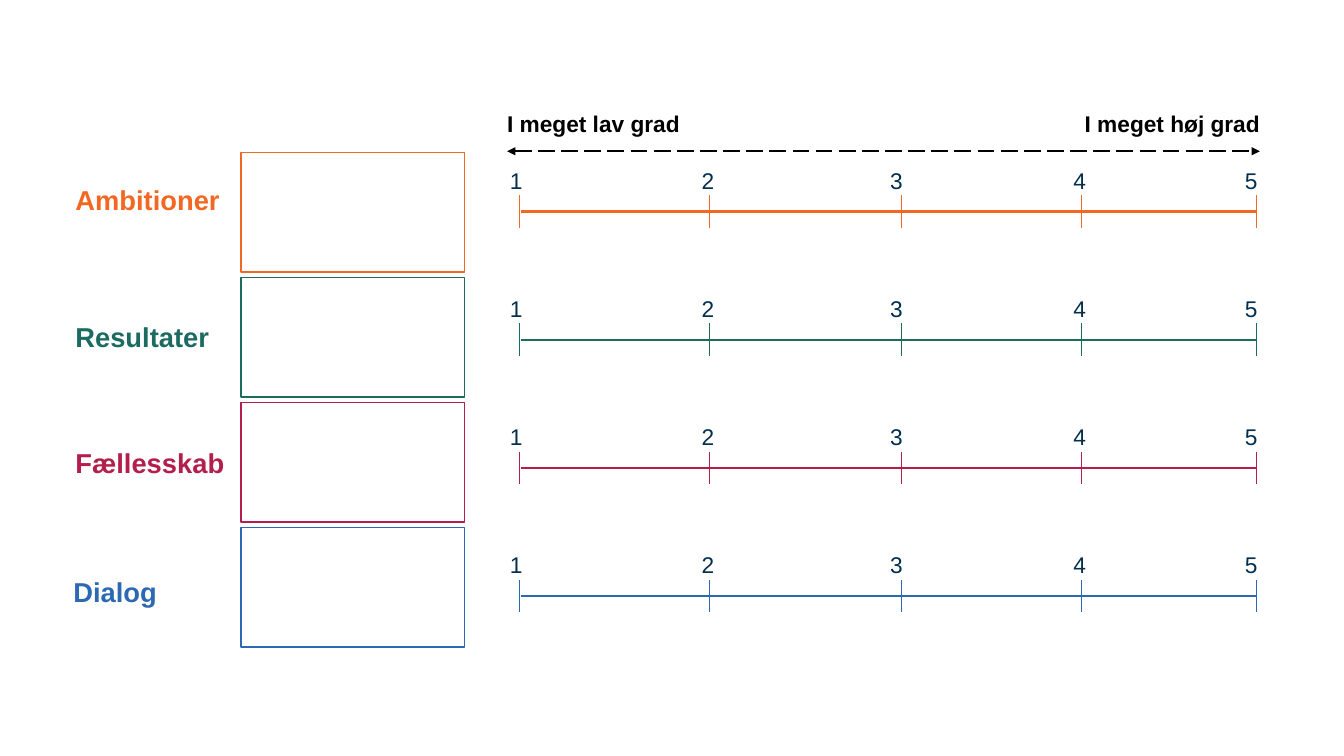
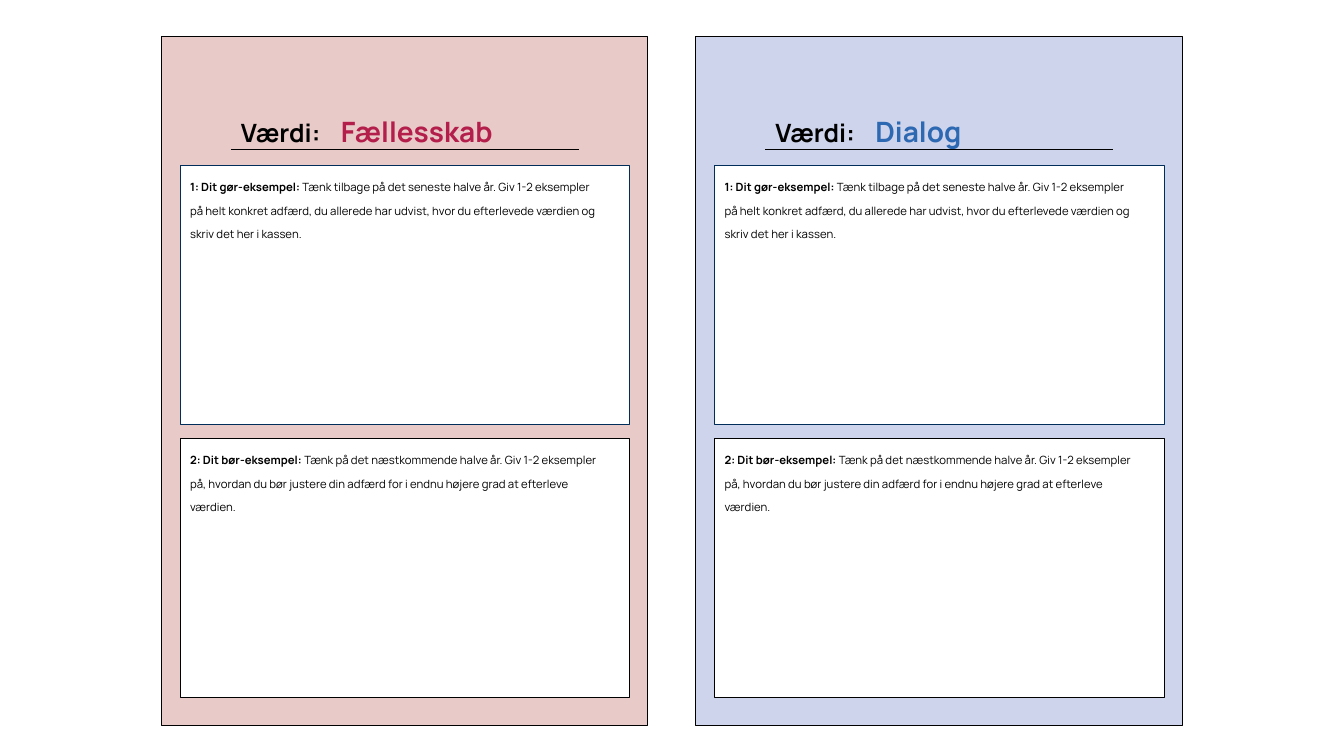
import pptx
import pptx.dml.color
import pptx.enum.dml
import pptx.enum.shapes
import pptx.enum.text
import pptx.oxml.ns
import pptx.util
from lxml import etree
from pptx.util import Cm

qn = pptx.oxml.ns.qn


class Theme:
    black = "000000"
    white = "FFFFFF"
    navy = "022F4C"
    frame = "002D59"
    orange = "F26721"
    green = "1C6B61"
    crimson = "B31E4B"
    blue = "2D68B2"
    rose = "E8CAC8"
    lavender = "CED4EC"
    scale_font = "Arial"
    card_font = "Manrope"
    label = 19.5
    number = 16.2
    heading = 18
    value = 20
    prompt = 14


class Deck:
    def __init__(self, theme):
        self.theme = theme
        self.prs = pptx.Presentation()
        self.prs.slide_width = Cm(33.87)
        self.prs.slide_height = Cm(19.05)
        self.s = None

    def slide(self):
        self.s = self.prs.slides.add_slide(self.prs.slide_layouts[6])

    def color(self, value):
        return pptx.dml.color.RGBColor.from_string(value)

    def rect(self, x, y, w, h, line, width=0.75, fill=None):
        sp = self.s.shapes.add_shape(
            pptx.enum.shapes.MSO_SHAPE.RECTANGLE, Cm(x), Cm(y), Cm(w), Cm(h))
        sp.shadow.inherit = False
        if fill:
            sp.fill.solid()
            sp.fill.fore_color.rgb = self.color(fill)
        else:
            sp.fill.background()
        sp.line.color.rgb = self.color(line)
        sp.line.width = pptx.util.Pt(width)

    def line(self, x1, y1, x2, y2, color, width, arrows=False):
        cxn = self.s.shapes.add_connector(
            pptx.enum.shapes.MSO_CONNECTOR.STRAIGHT,
            Cm(x1), Cm(y1), Cm(x2), Cm(y2))
        cxn.line.color.rgb = self.color(color)
        cxn.line.width = pptx.util.Pt(width)
        spPr = cxn._element.spPr
        if arrows:
            cxn.line.dash_style = pptx.enum.dml.MSO_LINE.LONG_DASH
            for end in ("a:headEnd", "a:tailEnd"):
                etree.SubElement(spPr.find(qn("a:ln")), qn(end), type="triangle")
        etree.SubElement(spPr, qn("a:effectLst"))

    def text(self, x, y, w, h, runs, font, inset=True, wrap=True,
             right=False, tab=None, raised=False):
        tb = self.s.shapes.add_textbox(Cm(x), Cm(y), Cm(w), Cm(h))
        tf = tb.text_frame
        tf.word_wrap = wrap
        if not inset:
            tf.margin_left = tf.margin_right = 0
            tf.margin_top = tf.margin_bottom = 0
        p = tf.paragraphs[0]
        if tab:
            tabs = etree.SubElement(p._p.get_or_add_pPr(), qn("a:tabLst"))
            etree.SubElement(tabs, qn("a:tab"), pos=str(Cm(tab)), algn="l")
        if right:
            p.alignment = pptx.enum.text.PP_ALIGN.RIGHT
        for content, size, color, bold in runs:
            r = p.add_run()
            r.text = content
            r.font.name = font
            r.font.size = pptx.util.Pt(size)
            r.font.bold = bold
            r.font.color.rgb = self.color(color)
            if raised:
                r._r.get_or_add_rPr().set("baseline", "30000")

    def label(self, x, y, content, color):
        t = self.theme
        self.text(x, y, 4.4, 1.09, [(content, t.label, color, True)],
                  t.scale_font, wrap=False)

    def caption(self, x, y, w, content, color, bold=False, right=False):
        t = self.theme
        self.text(x, y, w, 0.69, [(content, t.number, color, bold)],
                  t.scale_font, inset=False, wrap=False, right=right)

    def scale(self, y, color):
        ticks = (13.08, 17.88, 22.71, 27.25, 31.67)
        numbers = (12.85, 17.68, 22.43, 27.05, 31.37)
        self.line(13.12, y, ticks[-1], y, color, 1.5)
        for i, (tick, number) in enumerate(zip(ticks, numbers), 1):
            self.line(tick, y - 0.41, tick, y + 0.41, color, 0.5)
            self.caption(number, y - 1.13, 0.38, str(i), self.theme.navy)

    def card(self, x, value, color, fill, prompts):
        t = self.theme
        self.rect(x, 0.91, 12.27, 17.37, t.black, fill=fill)
        self.text(x + 1.76, 2.77, 8.76, 1.12,
                  [("Værdi:\t", t.heading, t.black, True),
                   (value, t.value, color, True)],
                  t.card_font, tab=2.52)
        self.line(x + 1.76, 3.76, x + 10.52, 3.76, t.black, 1)
        for i, (lead, body, border, w) in enumerate(prompts):
            y = 4.17 + 6.88 * i
            self.rect(x + 0.48, y, 11.33, 6.53, border, fill=t.white)
            self.text(x + 0.48, y + 0.19, w, 2.24,
                      [(lead, t.prompt, t.black, True),
                       (body, t.prompt, t.black, False)],
                      t.card_font, raised=True)


def main():
    t = Theme()
    deck = Deck(t)

    deck.slide()
    deck.caption(12.78, 2.77, 4.39, "I meget lav grad", t.black, bold=True)
    deck.caption(27.3, 2.77, 4.45, "I meget høj grad", t.black, bold=True, right=True)
    deck.line(12.78, 3.81, 31.75, 3.81, t.black, 1.5, arrows=True)
    values = [
        ("Ambitioner", t.orange, 1.65, 4.5),
        ("Resultater", t.green, 1.65, 7.95),
        ("Fællesskab", t.crimson, 1.65, 11.13),
        ("Dialog", t.blue, 1.6, 14.37),
    ]
    for i, (name, color, x, y) in enumerate(values):
        deck.label(x, y, name, color)
        deck.rect(6.07, 3.84 + 3.15 * i, 5.64, 3.02, color, width=1)
        deck.scale(5.33 + 3.23 * i, color)

    deck.slide()
    prompts = [
        ("1: Dit gør-eksempel: ",
         "Tænk tilbage på det seneste halve år. Giv 1-2 eksempler på helt "
         "konkret adfærd, du allerede har udvist, hvor du efterlevede værdien "
         "og skriv det her i kassen.", t.frame, 10.82),
        ("2: Dit bør-eksempel: ",
         "Tænk på det næstkommende halve år. Giv 1-2 eksempler på, hvordan du "
         "bør justere din adfærd for i endnu højere grad at efterleve værdien.",
         t.black, 11.07),
    ]
    deck.card(4.06, "Fællesskab", t.crimson, t.rose, prompts)
    deck.card(17.53, "Dialog", t.blue, t.lavender, prompts)

    deck.prs.save("out.pptx")


if __name__ == "__main__":
    main()
